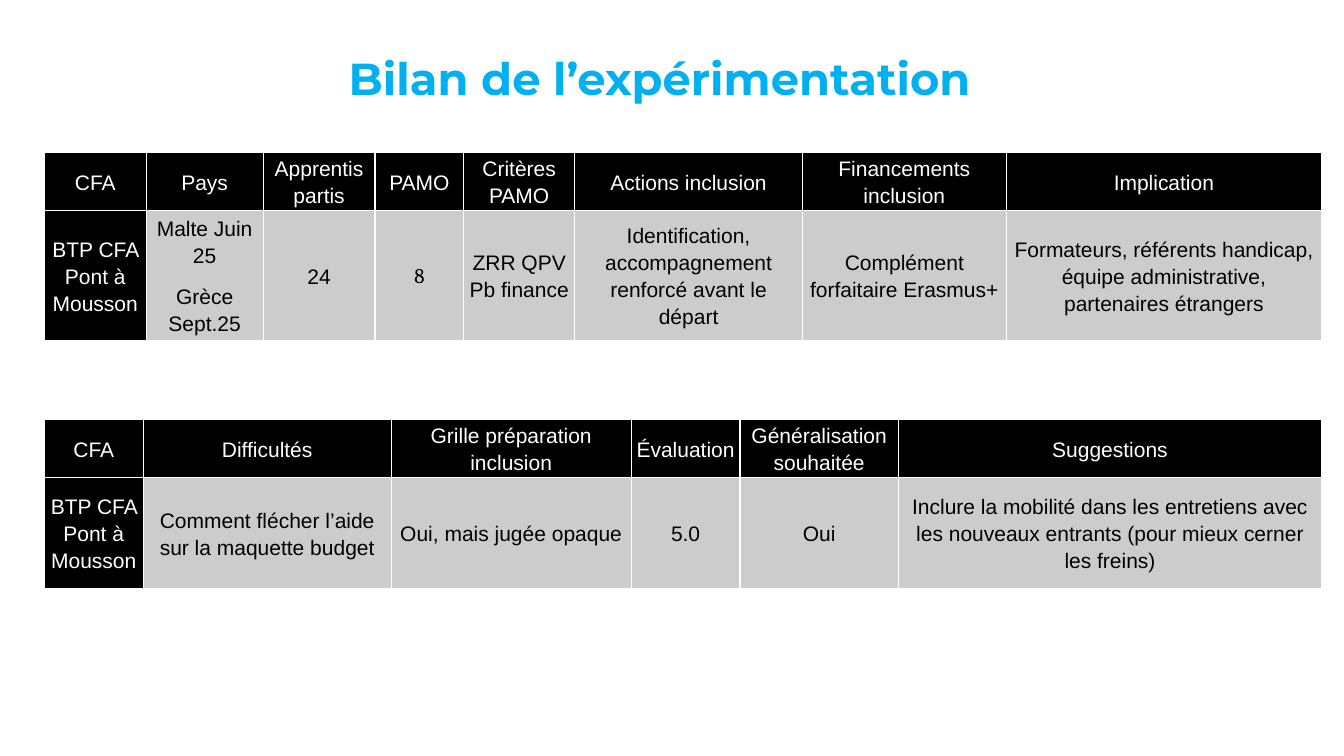
from dataclasses import dataclass
from lxml.etree import SubElement as Sub
from pptx import Presentation as Deck
from pptx.dml.color import RGBColor as Color
from pptx.enum.text import MSO_ANCHOR as Anchor, MSO_AUTO_SIZE as Auto, PP_ALIGN as Align
from pptx.oxml.ns import qn
from pptx.util import Pt

SCALE = 9144


@dataclass(frozen=True)
class Theme:
    blue: str = "00B0F0"
    black: str = "000000"
    white: str = "FFFFFF"
    grey: str = "CCCCCC"
    head: str = "Montserrat"
    body: str = "Arial"
    serif: str = "Cambria"
    large: int = 32
    small: int = 15
    after: int = 10
    edge: int = 1


THEME = Theme()

TRIPS = [
    ["CFA", "Pays", "Apprentis partis", "PAMO", "Critères PAMO",
     "Actions inclusion", "Financements inclusion", "Implication"],
    ["BTP CFA Pont à Mousson", "Malte Juin 25\nGrèce Sept.25", "24", "8",
     "ZRR QPV Pb finance",
     "Identification, accompagnement renforcé avant le départ",
     "Complément forfaitaire Erasmus+",
     "Formateurs, référents handicap, équipe administrative, partenaires étrangers"],
]
VIEWS = [
    ["CFA", "Difficultés", "Grille préparation inclusion", "Évaluation",
     "Généralisation souhaitée", "Suggestions"],
    ["BTP CFA Pont à Mousson", "Comment flécher l’aide sur la maquette budget",
     "Oui, mais jugée opaque", "5.0", "Oui",
     "Inclure la mobilité dans les entretiens avec les nouveaux entrants "
     "(pour mieux cerner les freins)"],
]


def px(size):
    return size * SCALE


def add_run(para, text, size, font, color, bold=False):
    run = para.add_run()
    run.text = text
    run.font.size = Pt(size)
    run.font.name = font
    run.font.bold = bold
    run.font.color.rgb = Color.from_string(color)


def add_title(slide, text, left, top, width, height):
    box = slide.shapes.add_textbox(px(left), px(top), px(width), px(height))
    frame = box.text_frame
    frame.word_wrap = True
    frame.auto_size = Auto.SHAPE_TO_FIT_TEXT
    add_run(frame.paragraphs[0], text, THEME.large, THEME.head, THEME.blue, True)


def set_edges(cell):
    props = cell._tc.get_or_add_tcPr()
    for side in ("lnL", "lnR", "lnT", "lnB"):
        line = Sub(props, qn(f"a:{side}"), w=str(Pt(THEME.edge)))
        fill = Sub(line, qn("a:solidFill"))
        Sub(fill, qn("a:srgbClr"), val=THEME.white)


def fill_cell(cell, text, dark, font):
    set_edges(cell)
    cell.fill.solid()
    cell.fill.fore_color.rgb = Color.from_string(THEME.black if dark else THEME.grey)
    cell.vertical_anchor = Anchor.MIDDLE
    cell.margin_left = cell.margin_right = px(3)
    cell.margin_top = cell.margin_bottom = 0
    frame = cell.text_frame
    for i, part in enumerate(text.split("\n")):
        para = frame.add_paragraph() if i else frame.paragraphs[0]
        para.alignment = Align.CENTER
        para.line_spacing = 1.15
        para.space_after = Pt(THEME.after)
        add_run(para, part, THEME.small, font, THEME.white if dark else THEME.black)


def add_grid(slide, left, top, widths, heights, rows, fonts):
    frame = slide.shapes.add_table(len(rows), len(widths), px(left), px(top),
                                   px(sum(widths)), px(sum(heights)))
    table = frame.table
    for col, width in zip(table.columns, widths):
        col.width = px(width)
    for row, height in zip(table.rows, heights):
        row.height = px(height)
    for r, texts in enumerate(rows):
        for c, text in enumerate(texts):
            font = fonts.get((r, c), THEME.body)
            fill_cell(table.cell(r, c), text, r == 0 or c == 0, font)


def main():
    deck = Deck()
    deck.slide_width, deck.slide_height = px(1333), px(750)
    slide = deck.slides.add_slide(deck.slide_layouts[6])
    add_title(slide, "Bilan de l’expérimentation", 336, 45, 929, 64)
    add_grid(slide, 44, 151, [101, 116, 111, 88, 110, 226, 202, 313],
             [54, 110], TRIPS, {(1, 3): THEME.serif})
    add_grid(slide, 44, 416, [98, 246, 238, 108, 157, 420],
             [55, 110], VIEWS, {})
    deck.save("out.pptx")


if __name__ == "__main__":
    main()
